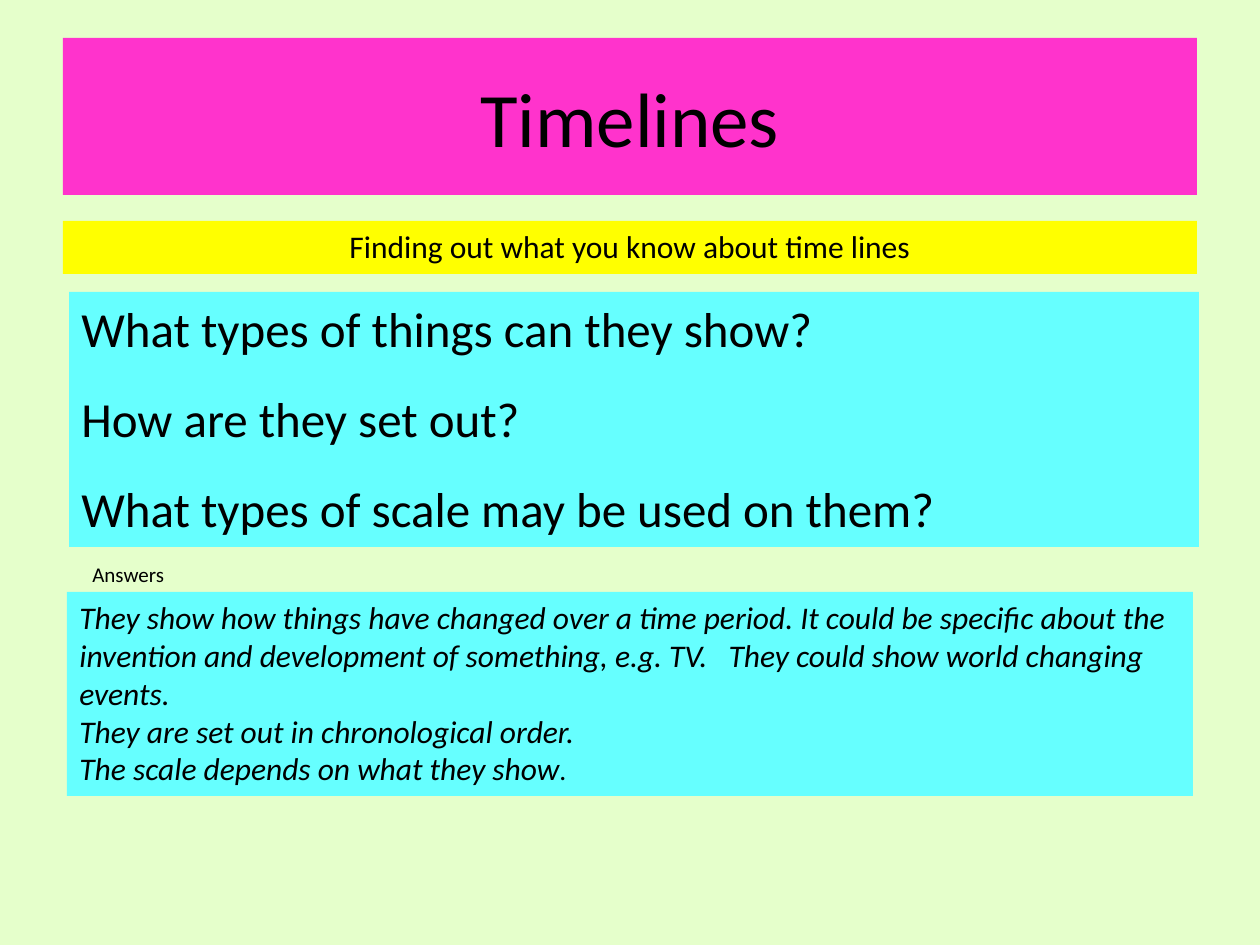
import pptx
import pptx.dml.color
import pptx.enum.shapes
import pptx.enum.text
import pptx.util

PX = pptx.util.Inches(1) // 126
ALIGN = pptx.enum.text.PP_ALIGN
ANCHOR = pptx.enum.text.MSO_ANCHOR


def color(value):
    return pptx.dml.color.RGBColor.from_string(value)


class SlideBuilder:
    font_name = "Calibri"
    text_color = "000000"

    def __init__(self, slide):
        self.slide = slide

    def background(self, fill):
        self.slide.background.fill.solid()
        self.slide.background.fill.fore_color.rgb = color(fill)

    def panel(self, box, fill, lines, size, **style):
        """Draw a filled rectangle with text."""
        shape = self.slide.shapes.add_shape(
            pptx.enum.shapes.MSO_SHAPE.RECTANGLE, *(n * PX for n in box))
        shape.shadow.inherit = False
        shape.fill.solid()
        shape.fill.fore_color.rgb = color(fill)
        shape.line.fill.background()
        self.set_text(shape, lines, size, **style)
        return shape

    def label(self, box, text, size):
        """Draw text without a fill."""
        shape = self.slide.shapes.add_textbox(*(n * PX for n in box))
        self.set_text(shape, [text], size)

    def set_text(self, shape, lines, size, align=ALIGN.LEFT,
                 anchor=ANCHOR.TOP, gap=0, italic=False):
        frame = shape.text_frame
        frame.word_wrap = True
        frame.vertical_anchor = anchor
        frame.text = "\n".join(lines)
        for index, paragraph in enumerate(frame.paragraphs):
            paragraph.alignment = align
            paragraph.space_before = pptx.util.Pt(gap if index else 0)
            paragraph.font.name = self.font_name
            paragraph.font.size = pptx.util.Pt(size)
            paragraph.font.italic = italic
            paragraph.font.color.rgb = color(self.text_color)


def main():
    presentation = pptx.Presentation()
    presentation.slide_width = 1260 * PX
    presentation.slide_height = 945 * PX
    builder = SlideBuilder(
        presentation.slides.add_slide(presentation.slide_layouts[6]))
    builder.background("E5FFCB")

    # Title and subtitle
    builder.panel((63, 38, 1134, 157), "FF33CC", ["Timelines"], 44,
                  align=ALIGN.CENTER, anchor=ANCHOR.MIDDLE)
    builder.panel((63, 221, 1134, 53), "FFFF00",
                  ["Finding out what you know about time lines"], 18,
                  align=ALIGN.CENTER)

    # Questions
    builder.panel((69, 292, 1130, 255), "66FFFF", [
        "What types of things can they show?",
        "How are they set out?",
        "What types of scale may be used on them?",
    ], 28, gap=18)

    # Answers
    answers = builder.panel((67, 592, 1126, 204), "66FFFF", [
        "They show how things have changed over a time period. It could be "
        "specific about the invention and development of something, e.g. TV.   "
        "They could show world changing events.",
        "They are set out in chronological order.",
        "The scale depends on what they show",
    ], 18, italic=True)
    full_stop = answers.text_frame.paragraphs[-1].add_run()
    full_stop.text = "."
    full_stop.font.size = pptx.util.Pt(16)
    builder.label((80, 555, 116, 38), "Answers", 12)

    presentation.save("out.pptx")


if __name__ == "__main__":
    main()
